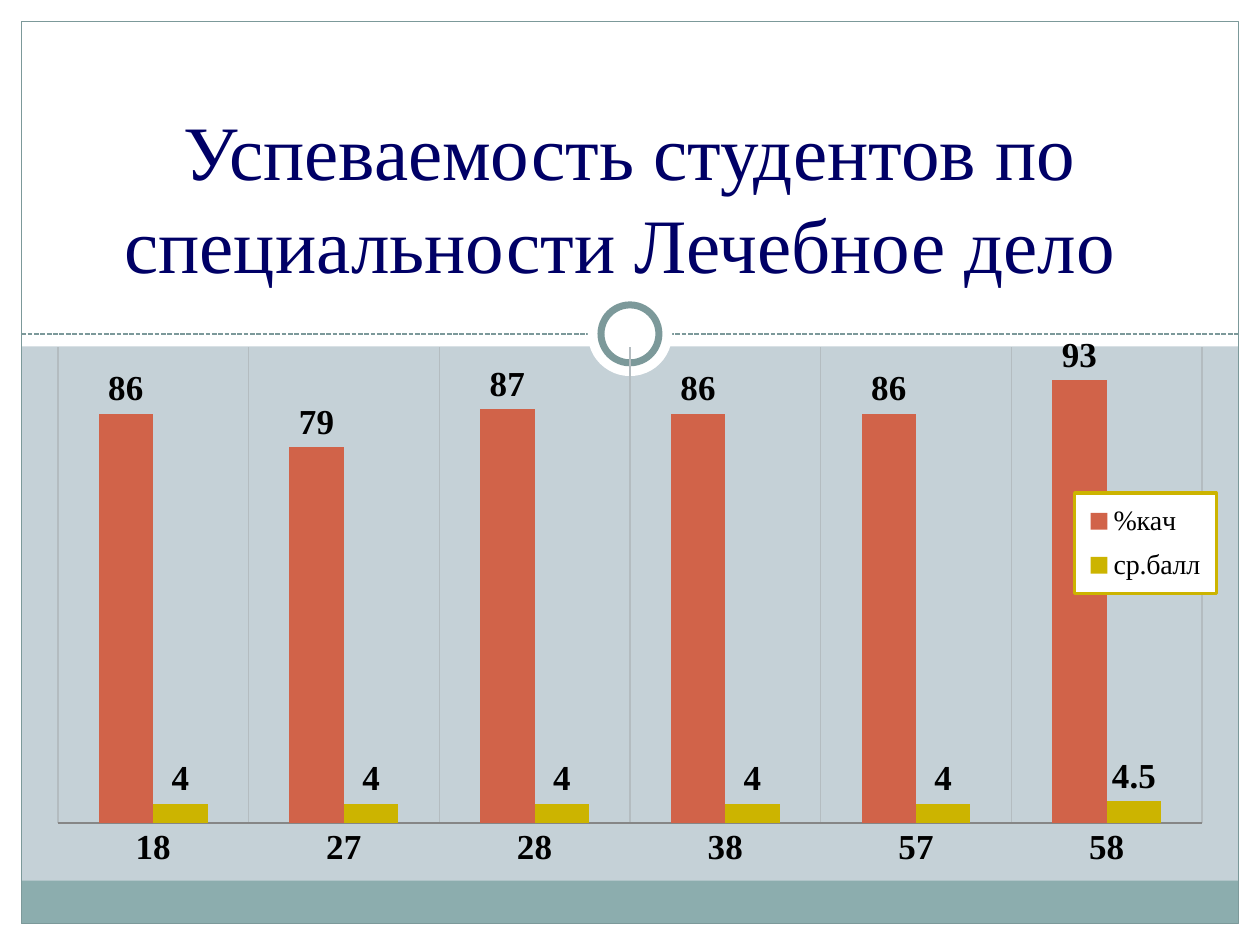
from pptx import Presentation
from pptx.chart.data import CategoryChartData
from pptx.dml.color import RGBColor
from pptx.enum.chart import XL_CHART_TYPE, XL_LABEL_POSITION, XL_LEGEND_POSITION, XL_TICK_MARK
from pptx.enum.dml import MSO_LINE
from pptx.enum.shapes import MSO_CONNECTOR, MSO_SHAPE
from pptx.enum.text import MSO_ANCHOR, PP_ALIGN
from pptx.oxml import parse_xml
from pptx.oxml.ns import nsdecls, qn
from pptx.util import Inches, Pt
from lxml.etree import SubElement

WIDTH, HEIGHT = 10, 7.5
MARGIN = 0.17
INNER = WIDTH - 2 * MARGIN
RULE_Y = 2.65
FACE = "Times New Roman"
COLORS = {
    "background": "C5D1D7", "white": "FFFFFF", "footer": "8CADAE",
    "frame": "7C999A", "title": "000066", "text": "000000",
    "quality": "D16349", "grade": "CCB400", "grid": "B4BCC0", "axis": "868686",
}
GROUPS = ["18", "27", "28", "38", "57", "58"]
RESULTS = [
    ("%кач", "quality", [86, 79, 87, 86, 86, 93]),
    ("ср.балл", "grade", [4, 4, 4, 4, 4, 4.5]),
]


def rgb(name):
    return RGBColor.from_string(COLORS[name])


def style_font(font, size, color="text", bold=False, face=FACE):
    font.size, font.bold, font.name = Pt(size), bold, face
    font.color.rgb = rgb(color)


def style_line(line, color, width):
    line.color.rgb = rgb(color)
    line.width = Pt(width)


def write_text(frame, text, size, color, align=PP_ALIGN.CENTER, anchor=MSO_ANCHOR.BOTTOM):
    frame.word_wrap = True
    frame.vertical_anchor = anchor
    paragraph = frame.paragraphs[0]
    paragraph.alignment = align
    run = paragraph.add_run()
    run.text = text
    style_font(run.font, size, color)


def add_block(slide, box, kind=MSO_SHAPE.RECTANGLE, fill=None, line=None, width=0.75):
    block = slide.shapes.add_shape(kind, *map(Inches, box))
    block.shadow.inherit = False
    if fill:
        block.fill.solid()
        block.fill.fore_color.rgb = rgb(fill)
    else:
        block.fill.background()
    if line:
        style_line(block.line, line, width)
    else:
        block.line.fill.background()


def add_ring(slide, diameter, center_y, **style):
    box = ((WIDTH - diameter) / 2, center_y - diameter / 2, diameter, diameter)
    add_block(slide, box, MSO_SHAPE.OVAL, fill="white", **style)


def add_dashed_rule(slide):
    rule = slide.shapes.add_connector(
        MSO_CONNECTOR.STRAIGHT, Inches(MARGIN), Inches(RULE_Y),
        Inches(WIDTH - MARGIN), Inches(RULE_Y))
    style_line(rule.line, "frame", 0.9)
    rule.line.dash_style = MSO_LINE.SQUARE_DOT
    SubElement(rule.element.spPr, qn("a:effectLst"))


def add_decor(slide):
    for box in [
        (0, HEIGHT - MARGIN, WIDTH, MARGIN),
        (WIDTH - MARGIN, 0, MARGIN, HEIGHT),
        (0, 0, MARGIN, HEIGHT),
        (0, 0, WIDTH, 2.75),
    ]:
        add_block(slide, box, fill="white")
    add_block(slide, (MARGIN, 6.99, INNER, 0.34), fill="footer")
    add_dashed_rule(slide)
    add_block(slide, (MARGIN, MARGIN, INNER, HEIGHT - 2 * MARGIN), line="frame")
    add_ring(slide, 0.67, RULE_Y)
    add_ring(slide, 0.46, RULE_Y, line="frame", width=4)


def place_title(slide, text):
    title = slide.shapes.title
    title.left, title.top, title.width, title.height = map(Inches, (0.75, 0.42, 8.5, 1.92))
    write_text(title.text_frame, text, 44, "title")
    title.element.getparent().append(title.element)  # in front of the white band


def set_layout(part, index, x, y, w, h, inner=False):
    """Fix the place of a chart part, in shares of the chart's size."""
    for old in part.findall(qn("c:layout")):
        part.remove(old)
    target = '<c:layoutTarget val="inner"/>' if inner else ""
    part.insert(index, parse_xml(
        f'<c:layout {nsdecls("c")}><c:manualLayout>{target}'
        '<c:xMode val="edge"/><c:yMode val="edge"/>'
        f'<c:x val="{x}"/><c:y val="{y}"/><c:w val="{w}"/><c:h val="{h}"/>'
        '</c:manualLayout></c:layout>'))


def style_axes(chart):
    groups, values = chart.category_axis, chart.value_axis
    groups.major_tick_mark = groups.minor_tick_mark = XL_TICK_MARK.NONE
    groups.has_major_gridlines = True
    style_line(groups.major_gridlines.format.line, "grid", 0.75)
    style_line(groups.format.line, "axis", 1)
    style_font(groups.tick_labels.font, 20, bold=True)
    values.minimum_scale, values.maximum_scale = 0, 100
    values.has_major_gridlines = False
    values.visible = False


def style_legend(chart):
    chart.has_legend = True
    legend = chart.legend
    legend.position = XL_LEGEND_POSITION.TOP
    legend.include_in_layout = True
    style_font(legend.font, 16)
    box = chart.element.find(".//" + qn("c:legend"))
    set_layout(box, 1, 0.873, 0.352, 0.119, 0.168)
    box.find(qn("c:txPr")).addprevious(parse_xml(
        f'<c:spPr {nsdecls("c", "a")}>'
        f'<a:solidFill><a:srgbClr val="{COLORS["white"]}"/></a:solidFill>'
        f'<a:ln w="{Pt(2)}"><a:solidFill><a:srgbClr val="{COLORS["grade"]}"/>'
        '</a:solidFill></a:ln></c:spPr>'))


def add_results_chart(slide):
    data = CategoryChartData()
    data.categories = GROUPS
    for name, _, values in RESULTS:
        data.add_series(name, values)
    chart = slide.shapes.add_chart(
        XL_CHART_TYPE.COLUMN_CLUSTERED, *map(Inches, (0.28, 2.25, 9.45, 4.73)), data).chart
    chart.has_title = False
    style_font(chart.font, 10, face="TeX Gyre Schola")
    plot = chart.plots[0]
    plot.gap_width, plot.overlap, plot.vary_by_categories = 150, 0, False
    for series, (_, color, _) in zip(plot.series, RESULTS):
        series.format.fill.solid()
        series.format.fill.fore_color.rgb = rgb(color)
        labels = series.data_labels
        labels.show_value = True
        labels.position = XL_LABEL_POSITION.OUTSIDE_END
        style_font(labels.font, 20, bold=True)
    style_axes(chart)
    style_legend(chart)
    set_layout(chart.element.find(".//" + qn("c:plotArea")), 0,
               0.019, 0.107, 0.961, 0.798, inner=True)


def main():
    deck = Presentation()
    deck.slide_width, deck.slide_height = Inches(WIDTH), Inches(HEIGHT)
    slide = deck.slides.add_slide(deck.slide_layouts[0])
    subtitle = slide.placeholders[1].element
    subtitle.getparent().remove(subtitle)
    slide.background.fill.solid()
    slide.background.fill.fore_color.rgb = rgb("background")
    add_decor(slide)
    place_title(slide, "Успеваемость студентов по специальности Лечебное дело ")
    add_results_chart(slide)
    deck.save("out.pptx")


if __name__ == "__main__":
    main()
